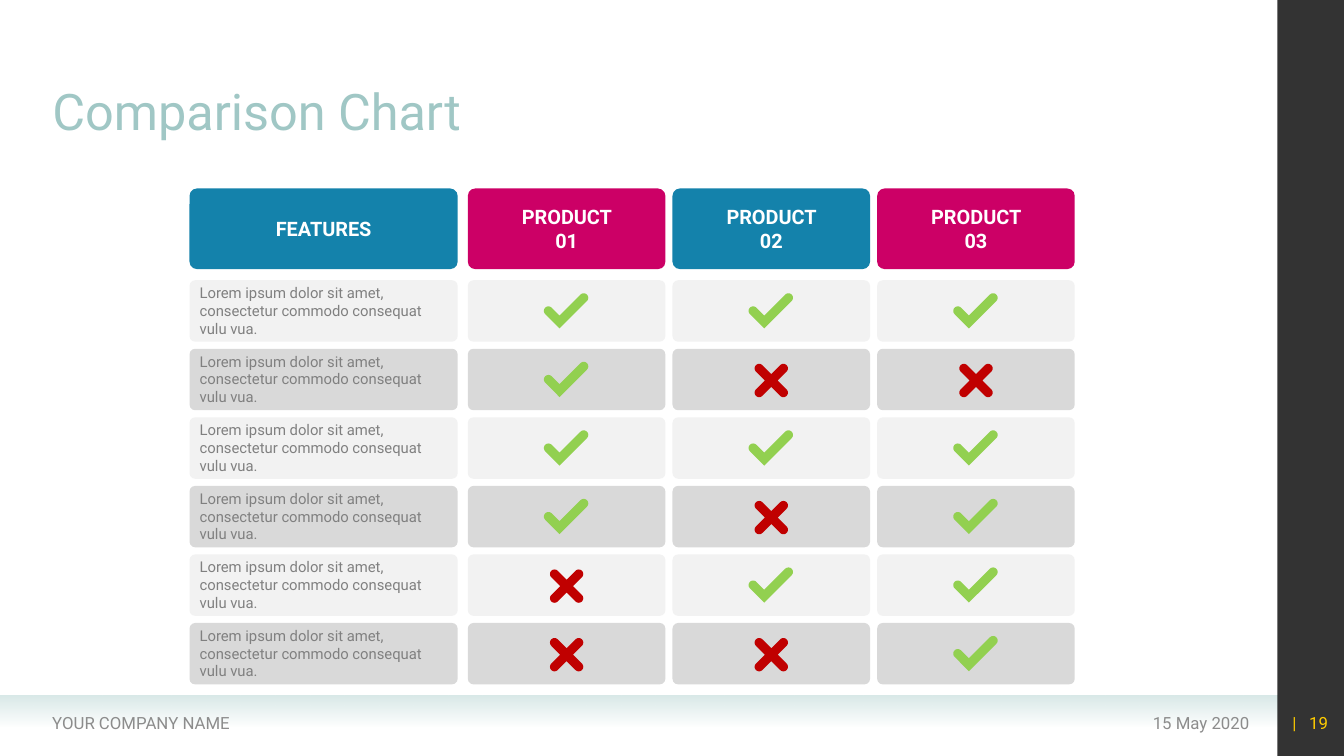
from math import cos, radians, sin, sqrt

from pptx import Presentation
from pptx.dml.color import RGBColor
from pptx.enum.shapes import MSO_SHAPE
from pptx.enum.text import MSO_ANCHOR, MSO_AUTO_SIZE, PP_ALIGN
from pptx.oxml.ns import qn
from pptx.util import Inches, Pt
from lxml import etree

RECT, ROUND = MSO_SHAPE.RECTANGLE, MSO_SHAPE.ROUNDED_RECTANGLE
LEFT, MID, RIGHT = PP_ALIGN.LEFT, PP_ALIGN.CENTER, PP_ALIGN.RIGHT
FONT = "Roboto"
HEX = {
    "mist": "D9E9E8", "black": "000000", "title": "A0C7C5", "foot": "8C8C8C",
    "gold": "FFCC00", "blue": "1482AB", "pink": "CC0066", "light": "F2F2F2",
    "dark": "D9D9D9", "white": "FFFFFF", "body": "808080",
    "green": "92D050", "red": "C00000",
}
RGB = {name: RGBColor.from_string(code) for name, code in HEX.items()}

prs = Presentation()
prs.slide_width, prs.slide_height = Inches(13.33), Inches(7.5)
slide = prs.slides.add_slide(prs.slide_layouts[5])
shapes = slide.shapes


def block(kind, x, y, w, h, color):
    shape = shapes.add_shape(kind, Inches(x), Inches(y), Inches(w), Inches(h))
    shape.shadow.inherit = False
    shape.line.fill.background()
    shape.fill.solid()
    shape.fill.fore_color.rgb = RGB[color]
    return shape


def label(text, x, y, w, h, size, color, align=LEFT):
    """Add a text box, centred vertically, and return its frame."""
    box = shapes.add_textbox(Inches(x), Inches(y), Inches(w), Inches(h))
    frame = box.text_frame
    frame.word_wrap = True
    frame.vertical_anchor = MSO_ANCHOR.MIDDLE
    frame.text = text
    para = frame.paragraphs[0]
    para.alignment = align
    para.font.name, para.font.size = FONT, Pt(size)
    para.font.color.rgb = RGB[color]
    return frame


# Footer band and side bar
band = block(RECT, 0, 6.9, 12.67, 0.31, "mist")
band.fill.gradient()
band.fill.gradient_angle = 270
for stop in band.fill.gradient_stops:
    stop.color.rgb = RGB["mist"]
side = block(RECT, 12.67, 0, 0.67, 7.5, "black")
for shape, alpha in ((band, 0), (side, 80000)):
    tint = shape.element.spPr.findall(".//" + qn("a:srgbClr"))[-1]
    etree.SubElement(tint, qn("a:alpha")).set("val", str(alpha))

label("15 May 2020", 9.1, 6.97, 3.39, 0.4, 12, "foot", RIGHT)
label("YOUR COMPANY NAME", 0.42, 6.97, 4.9, 0.4, 12, "foot")
page = label("|", 12.6, 6.97, 0.67, 0.4, 12, "gold", RIGHT).paragraphs[0]
gap = page.add_run()
gap.text = " "
gap._r.get_or_add_rPr().set("spc", "600")
page.add_run().text = "19"

# Title
title = shapes.title
title.left, title.top = Inches(0.42), Inches(0.2)
title.width, title.height = Inches(11.21), Inches(1.25)
frame = title.text_frame
frame.text = "Comparison Chart"
frame.auto_size = MSO_AUTO_SIZE.NONE
frame.vertical_anchor = MSO_ANCHOR.BOTTOM
para = frame.paragraphs[0]
para.alignment, para.line_spacing = LEFT, 0.9
para.font.name, para.font.size = FONT, Pt(36)
para.font.color.rgb = RGB["title"]

# Grid of rounded cells
HEADS = [
    ("FEATURES", 1.88, 2.66, "blue"),
    ("PRODUCT 01", 4.64, 1.96, "pink"),
    ("PRODUCT 02", 6.67, 1.96, "blue"),
    ("PRODUCT 03", 8.7, 1.96, "pink"),
]
TICKS = ["YYY", "YNN", "YYY", "YNY", "NYY", "NNY"]
LOREM = "Lorem ipsum dolor sit amet, consectetur commodo consequat vulu vua."
TOP, STEP, HIGH = 2.78, 0.68, 0.61
tops = [TOP + STEP * row for row in range(len(TICKS))]

for text, x, w, color in HEADS:
    block(ROUND, x, 1.87, w, 0.8, color).adjustments[0] = 0.093
    for row, y in enumerate(tops):
        shade = "dark" if row % 2 else "light"
        block(ROUND, x, y, w, HIGH, shade).adjustments[0] = 0.093

for text, x, w, color in HEADS:
    wide = 1.27
    head = label(text, x + (w - wide) / 2, 2.1, wide, 0.34, 14.2, "white", MID)
    head.paragraphs[0].font.bold = True

for y in tops:
    note = label(LOREM, 1.94, y + 0.01, 2.54, 0.58, 10.6, "body")
    note.margin_left = note.margin_right = Inches(0.04)
    note.margin_top = note.margin_bottom = Inches(0.02)

# Outlines of the marks: round caps (x, y, first angle) and sharp corners
R = 0.045
NOTCH = R * sqrt(2)
check = [(0, NOTCH), (-0.11, -0.11, 135), (0, -NOTCH), (0.24, -0.24, 225)]
cross = []
for turn in range(0, 360, 90):
    side_x, side_y = cos(radians(turn + 45)), sin(radians(turn + 45))
    cross.append((0.17 * side_x, 0.17 * side_y, turn - 45))
    end = radians(turn + 90)
    cross.append((NOTCH * cos(end), NOTCH * sin(end)))

# Outline, colour and offset from the middle of the cell
MARKS = {"Y": (check, "green", -0.07, 0.11), "N": (cross, "red", 0, 0.01)}

for col, (text, x, w, color) in enumerate(HEADS[1:]):
    for y, ticks in zip(tops, TICKS):
        outline, tint, dx, dy = MARKS[ticks[col]]
        mid_x, mid_y = x + w / 2 + dx, y + HIGH / 2 + dy
        dots = []
        for px, py, *cap in outline:
            if not cap:
                dots.append((px, py))
                continue
            for turn in range(cap[0], cap[0] + 181, 15):
                arc = radians(turn)
                dots.append((px + R * cos(arc), py + R * sin(arc)))
        dots = [(Inches(mid_x + px), Inches(mid_y + py)) for px, py in dots]
        pen = shapes.build_freeform(*dots[0])
        pen.add_line_segments(dots[1:], close=True)
        mark = pen.convert_to_shape()
        mark.shadow.inherit = False
        mark.line.fill.background()
        mark.fill.solid()
        mark.fill.fore_color.rgb = RGB[tint]

prs.save("out.pptx")
